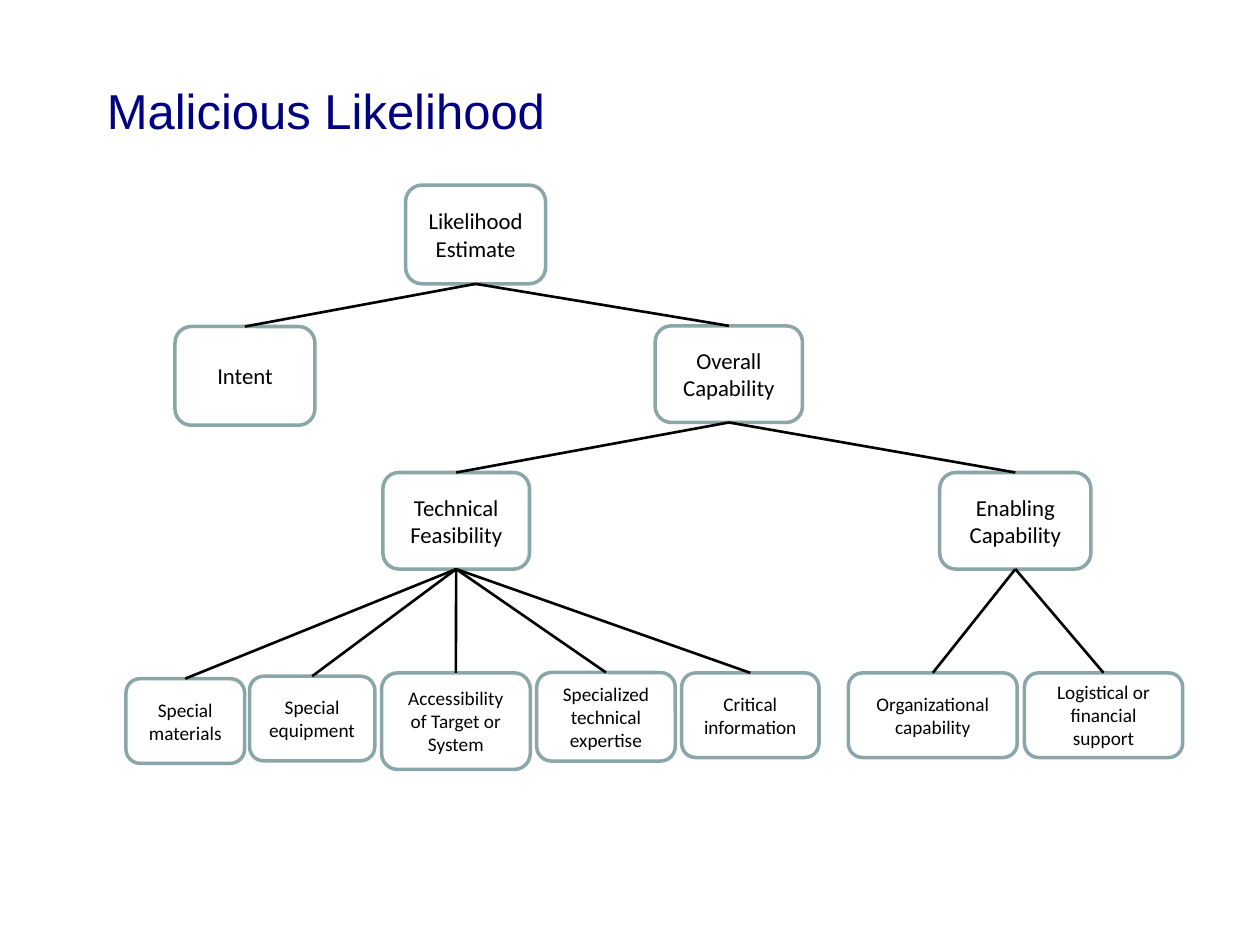
"""Draw the malicious likelihood tree on one slide."""
from dataclasses import dataclass

from lxml import etree
from pptx import Presentation
from pptx.dml.color import RGBColor
from pptx.enum import shapes, text
from pptx.oxml.ns import qn
from pptx.util import Pt

TOP, BOTTOM = 0, 2
BRANCH_SIZE, LEAF_SIZE = 13, 11


@dataclass(frozen=True)
class Factor:
    label: str
    parent: str
    left: float
    top: float
    width: float
    height: float
    size: float = LEAF_SIZE


FACTORS = [
    Factor("Likelihood Estimate", "", 231.8, 105.8, 80, 56.4, BRANCH_SIZE),
    Factor("Intent", "Likelihood Estimate", 100, 186.6, 80, 56.4, BRANCH_SIZE),
    Factor("Overall Capability", "Likelihood Estimate", 374.4, 186.2, 84.2, 55.2, BRANCH_SIZE),
    Factor("Technical Feasibility", "Overall Capability", 218.8, 270, 83.8, 55.2, BRANCH_SIZE),
    Factor("Enabling\nCapability", "Overall Capability", 537, 270, 86.4, 55.2, BRANCH_SIZE),
    Factor("Special materials", "Technical Feasibility", 72, 387.8, 67.8, 48.4),
    Factor("Special equipment", "Technical Feasibility", 142.6, 386.4, 71.6, 48.4),
    Factor("Accessibility of Target or System", "Technical Feasibility", 218, 384.5, 85, 55.2),
    Factor("Specialized technical expertise", "Technical Feasibility", 306.7, 384.3, 79.2, 50.6),
    Factor("Critical information", "Technical Feasibility", 389.5, 384.5, 78.5, 48.4),
    Factor("Organizational capability", "Enabling\nCapability", 484.8, 384.5, 96.5, 48.4),
    Factor("Logistical or financial support", "Enabling\nCapability", 585.4, 384.5, 90.4, 48.4),
]


def color(code: str) -> RGBColor:
    return RGBColor.from_string(code)


def write(frame, wording: str, size: float, font: str, ink: str, align) -> None:
    frame.word_wrap = True
    frame.vertical_anchor = text.MSO_ANCHOR.MIDDLE
    for index, line in enumerate(wording.split("\n")):
        paragraph = frame.add_paragraph() if index else frame.paragraphs[0]
        paragraph.alignment = align
        run = paragraph.add_run()
        run.text = line
        run.font.size = Pt(size)
        run.font.name = font
        run.font.color.rgb = color(ink)


def draw_title(slide, wording: str) -> None:
    title = slide.shapes.add_textbox(Pt(54), Pt(18), Pt(612), Pt(90))
    write(title.text_frame, wording, 28, "Arial", "000080", text.PP_ALIGN.LEFT)


def draw_factor(slide, factor: Factor):
    box = slide.shapes.add_shape(
        shapes.MSO_SHAPE.FLOWCHART_ALTERNATE_PROCESS,
        Pt(factor.left), Pt(factor.top), Pt(factor.width), Pt(factor.height))
    box.shadow.inherit = False
    box.fill.solid()
    box.fill.fore_color.rgb = color("FFFFFF")
    box.line.color.rgb = color("8AA6A8")
    box.line.width = Pt(2)
    write(box.text_frame, factor.label, factor.size, "Calibri", "000000",
          text.PP_ALIGN.CENTER)
    return box


def draw_branch(slide, parent, child) -> None:
    branch = slide.shapes.add_connector(
        shapes.MSO_CONNECTOR.STRAIGHT, Pt(0), Pt(0), Pt(0), Pt(0))
    branch.begin_connect(parent, BOTTOM)
    branch.end_connect(child, TOP)
    branch.line.color.rgb = color("000000")
    branch.line.width = Pt(1.5)
    etree.SubElement(branch._element.spPr, qn("a:effectLst"))


def main() -> None:
    deck = Presentation()
    deck.slide_width, deck.slide_height = Pt(720), Pt(540)
    slide = deck.slides.add_slide(deck.slide_layouts[6])
    draw_title(slide, "Malicious Likelihood")
    boxes = {factor.label: draw_factor(slide, factor) for factor in FACTORS}
    for factor in FACTORS:
        if factor.parent:
            draw_branch(slide, boxes[factor.parent], boxes[factor.label])
    deck.save("out.pptx")


if __name__ == "__main__":
    main()
